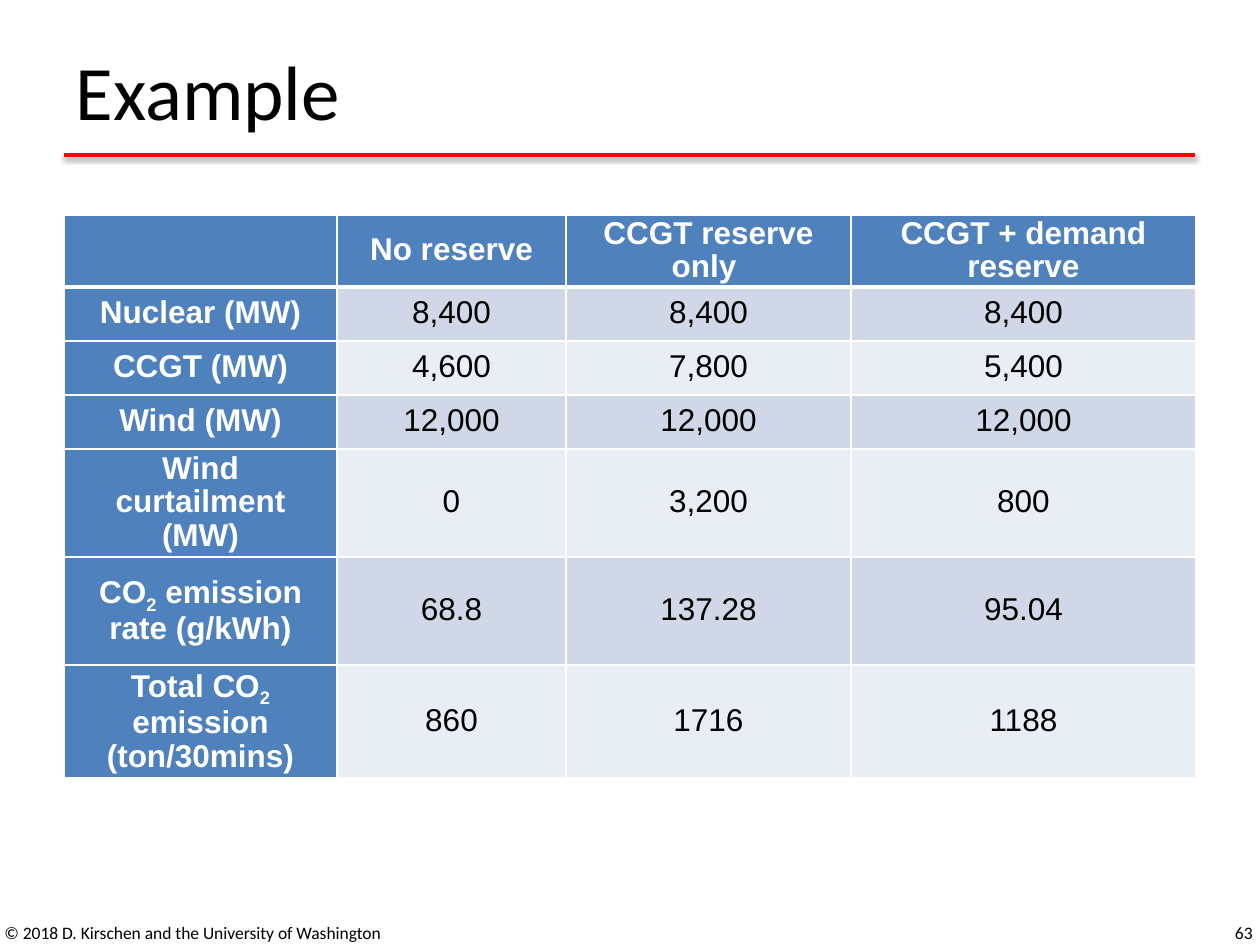
from lxml import etree
from pptx import Presentation
from pptx.dml.color import RGBColor
from pptx.enum.shapes import MSO_CONNECTOR
from pptx.enum.text import MSO_ANCHOR, PP_ALIGN
from pptx.oxml import parse_xml
from pptx.oxml.ns import nsdecls
from pptx.util import Emu, Pt

LEFT, CENTER, RIGHT = PP_ALIGN.LEFT, PP_ALIGN.CENTER, PP_ALIGN.RIGHT
MIDDLE = MSO_ANCHOR.MIDDLE
STRAIGHT = MSO_CONNECTOR.STRAIGHT
TITLE_ONLY = 5
EMU_PER_PX = 914400 / 126

BLACK, WHITE, RED = "000000", "FFFFFF", "FF0000"
HEADING_BLUE = "4F81BD"
BANDS = ("D0D8E8", "E9EDF4")

COLUMN_WIDTHS = (273, 229, 285, 345)
ROW_HEIGHTS = (66, 54, 54, 54, 108, 108, 108)
RESULTS = (
    ("", "No reserve", "CCGT reserve only ", "CCGT + demand reserve"),
    ("Nuclear (MW)", "8,400", "8,400", "8,400"),
    ("CCGT (MW)", "4,600", "7,800", "5,400"),
    ("Wind (MW)", "12,000", "12,000", "12,000"),
    ("Wind curtailment (MW)", "0", "3,200", "800"),
    ("CO_2_ emission rate (g/kWh)", "68.8", "137.28", "95.04"),
    ("Total CO_2_ emission (ton/30mins)", "860", "1716", "1188"),
)


def px(length):
    return Emu(round(length * EMU_PER_PX))


def rgb(color):
    return RGBColor.from_string(color)


def set_values(target, values):
    for name, value in values.items():
        setattr(target, name, value)


def write_text(frame, text, size, font, color, align, bold=False):
    """Write one paragraph; text between underscores becomes subscript."""
    para = frame.paragraphs[0]
    para.alignment = align
    for index, part in enumerate(text.split("_")):
        span = para.add_run()
        span.text = part
        set_values(span.font, {"size": Pt(size), "name": font, "bold": bold})
        span.font.color.rgb = rgb(color)
        if index % 2:
            span._r.get_or_add_rPr().set("baseline", "-25000")
    return para


def add_title(page, text):
    title = page.shapes.title
    set_values(title, {"left": px(63), "top": px(16),
                       "width": px(1134), "height": px(148)})
    title.text_frame.vertical_anchor = MIDDLE
    write_text(title.text_frame, text, 44, "Calibri", BLACK, LEFT)


def add_title_rule(page):
    rule = page.shapes.add_connector(STRAIGHT, px(64), px(155), px(1195), px(155))
    rule.line.color.rgb = rgb(RED)
    rule.line.width = Pt(2)
    rule._element.spPr.append(parse_xml(
        f'<a:effectLst {nsdecls("a")}>'
        f'<a:outerShdw blurRad="{Pt(3.1)}" dist="{Pt(1.6)}" dir="5400000" '
        f'rotWithShape="0"><a:srgbClr val="{BLACK}"><a:alpha val="38000"/>'
        '</a:srgbClr></a:outerShdw></a:effectLst>'))


def add_footer(page, text, left, width, align):
    box = page.shapes.add_textbox(px(left), px(908), px(width), px(50))
    set_values(box.text_frame, {"word_wrap": True, "vertical_anchor": MIDDLE})
    write_text(box.text_frame, text, 10, "Calibri", BLACK, align)


def set_borders(cell, top, bottom):
    """Draw white borders, with the top and bottom widths in points."""
    properties = cell._tc.get_or_add_tcPr()
    widths = {"lnL": 1, "lnR": 1, "lnT": top, "lnB": bottom}
    for index, (edge, width) in enumerate(widths.items()):
        border = parse_xml(f'<a:{edge} {nsdecls("a")} w="{Pt(width)}"/>')
        fill = etree.SubElement(border, border.tag.replace(edge, "solidFill"))
        color = etree.SubElement(fill, border.tag.replace(edge, "srgbClr"))
        color.set("val", WHITE)
        properties.insert(index, border)


def format_cell(cell, text, row, column):
    heading = row == 0 or column == 0
    set_values(cell, {"vertical_anchor": MIDDLE,
                      "margin_left": px(9), "margin_right": px(9),
                      "margin_top": 0, "margin_bottom": 0})
    cell.fill.solid()
    cell.fill.fore_color.rgb = rgb(HEADING_BLUE if heading else BANDS[(row - 1) % 2])
    set_borders(cell, top=3 if row == 1 else 1, bottom=3 if row == 0 else 1)
    if text:
        para = write_text(cell.text_frame, text, 18, "Arial",
                          WHITE if heading else BLACK, CENTER, heading)
        set_values(para, {"space_after": Pt(6), "line_spacing": 0.95})


def add_results_table(page):
    table = page.shapes.add_table(
        len(ROW_HEIGHTS), len(COLUMN_WIDTHS), px(64), px(215),
        px(sum(COLUMN_WIDTHS)), px(sum(ROW_HEIGHTS))).table
    table.first_col = True
    for column, width in zip(table.columns, COLUMN_WIDTHS):
        column.width = px(width)
    for row, height in zip(table.rows, ROW_HEIGHTS):
        row.height = px(height)
    for row, texts in enumerate(RESULTS):
        for column, text in enumerate(texts):
            format_cell(table.cell(row, column), text, row, column)


def main():
    deck = Presentation()
    deck.slide_width, deck.slide_height = px(1260), px(945)
    page = deck.slides.add_slide(deck.slide_layouts[TITLE_ONLY])
    add_title_rule(page)
    add_title(page, "Example")
    add_footer(page, "© 2018 D. Kirschen and the University of Washington",
               -8, 489, LEFT)
    add_footer(page, "63", 971, 294, RIGHT)
    add_results_table(page)
    deck.save("out.pptx")


if __name__ == "__main__":
    main()
